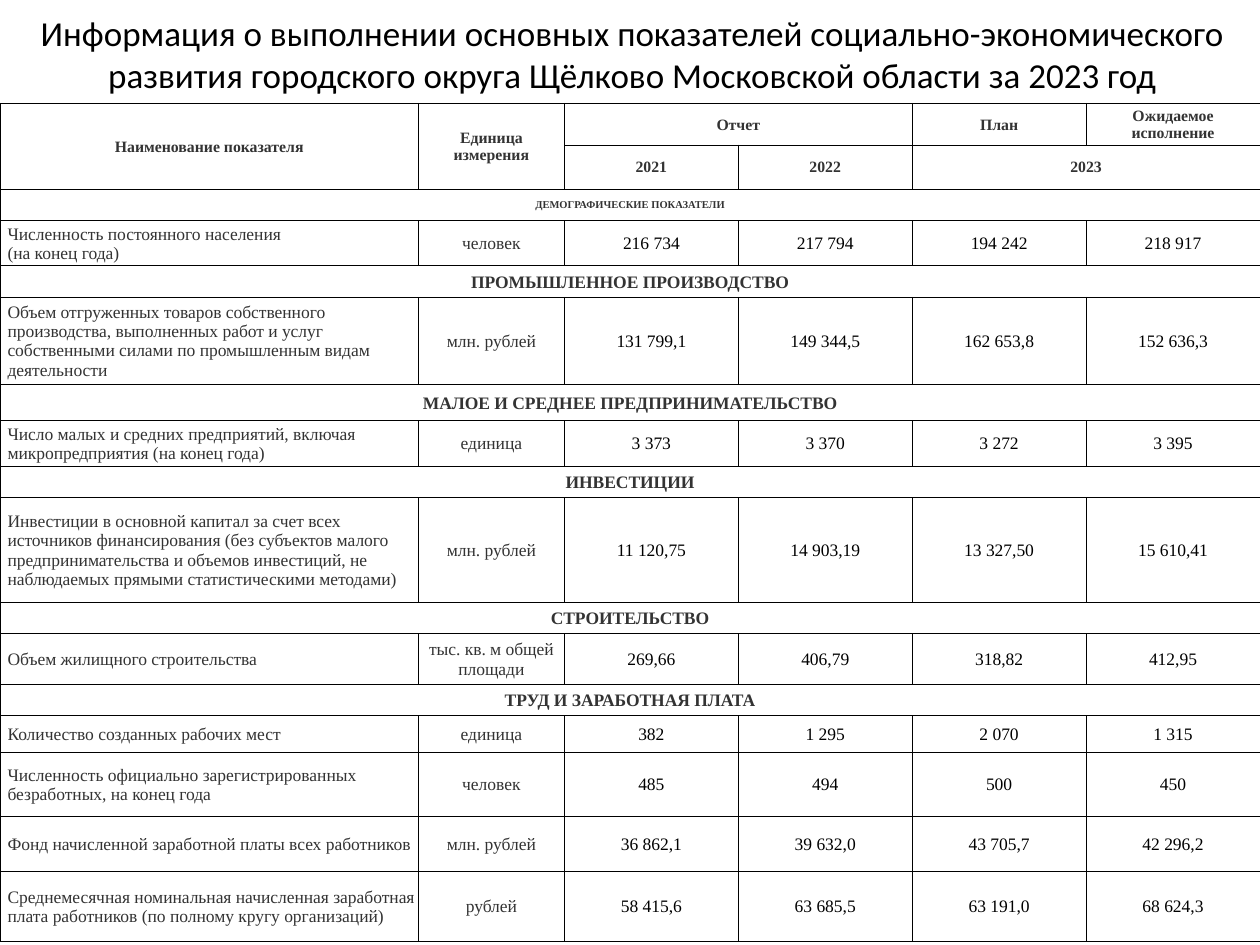
from copy import deepcopy

from lxml.etree import SubElement
from pptx import Presentation
from pptx.dml.color import RGBColor as RGB
from pptx.enum.text import MSO_ANCHOR as ANCHOR, MSO_AUTO_SIZE as AUTO, PP_ALIGN as ALIGN
from pptx.oxml.ns import qn
from pptx.util import Inches, Pt

# Content: a plain string is a section heading, a tuple is an indicator
TITLE = ("Информация о выполнении основных показателей социально-экономического "
         "развития городского округа Щёлково Московской области за 2023 год")
HEADER = [
    ("Наименование показателя", "Единица\nизмерения", "Отчет", None, "План",
     "Ожидаемое\nисполнение"),
    (None, None, "2021", "2022", "2023", None),
]
BODY = [
    "ДЕМОГРАФИЧЕСКИЕ ПОКАЗАТЕЛИ",
    ("Численность постоянного населения\v(на конец года)", "человек",
     "216 734", "217 794", "194 242", "218 917"),
    "ПРОМЫШЛЕННОЕ ПРОИЗВОДСТВО",
    ("Объем отгруженных товаров собственного производства, выполненных работ и услуг "
     "собственными силами по промышленным видам деятельности", "млн. рублей",
     "131 799,1", "149 344,5", "162 653,8", "152 636,3"),
    "МАЛОЕ И СРЕДНЕЕ ПРЕДПРИНИМАТЕЛЬСТВО",
    ("Число малых и средних предприятий, включая микропредприятия (на конец года)",
     "единица", "3 373", "3 370", "3 272", "3 395"),
    "ИНВЕСТИЦИИ",
    ("Инвестиции в основной капитал за счет всех источников финансирования (без субъектов "
     "малого предпринимательства и объемов инвестиций, не наблюдаемых прямыми "
     "статистическими методами)", "млн. рублей",
     "11 120,75", "14 903,19", "13 327,50", "15 610,41"),
    "СТРОИТЕЛЬСТВО",
    ("Объем жилищного строительства", "тыс. кв. м общей площади",
     "269,66", "406,79", "318,82", "412,95"),
    "ТРУД И ЗАРАБОТНАЯ ПЛАТА",
    ("Количество созданных рабочих мест", "единица", "382", "1 295", "2 070", "1 315"),
    ("Численность официально зарегистрированных безработных, на конец года", "человек",
     "485", "494", "500", "450"),
    ("Фонд начисленной заработной платы всех работников", "млн. рублей",
     "36 862,1", "39 632,0", "43 705,7", "42 296,2"),
    ("Среднемесячная номинальная начисленная заработная плата работников "
     "(по полному кругу организаций)", "рублей",
     "58 415,6", "63 685,5", "63 191,0", "68 624,3"),
]

# Layout in inches
COLS = [3.32, 1.16] + [1.38] * 4
SECTION_H = 0.25
ROWS = [0.33, 0.35, SECTION_H, 0.36, SECTION_H, 0.69, 0.29, 0.36, SECTION_H, 0.83,
        SECTION_H, 0.4, SECTION_H, 0.29, 0.51, 0.44, 0.55]
TABLE_TOP = 0.82
HEADER_MERGES = [((0, 0), (1, 0)), ((0, 1), (1, 1)), ((0, 2), (0, 3)), ((1, 4), (1, 5))]

COLORS = {"text": "333333", "value": "000000", "line": "000000", "fill": "FFFFFF"}
FONT = "Times New Roman"


def style_run(r, size, color, bold=False, name=FONT):
    for key, value in dict(name=name, size=Pt(size), bold=bold).items():
        setattr(r.font, key, value)
    r.font.color.rgb = RGB.from_string(COLORS[color])


def add_borders(cell):
    tc_pr = cell._tc.get_or_add_tcPr()
    for i, side in enumerate(("lnL", "lnR", "lnT", "lnB")):
        ln = tc_pr.makeelement(qn(f"a:{side}"), {"w": str(Pt(0.5))})
        fill = SubElement(ln, qn("a:solidFill"))
        SubElement(fill, qn("a:srgbClr"), val=COLORS["line"])
        tc_pr.insert(i, ln)


def frame_cell(cell):
    margins = dict(margin_left=0.01, margin_right=0.01, margin_top=0.01, margin_bottom=0)
    for key, value in margins.items():
        setattr(cell, key, Inches(value))
    cell.vertical_anchor = ANCHOR.MIDDLE
    cell.fill.solid()
    cell.fill.fore_color.rgb = RGB.from_string(COLORS["fill"])
    add_borders(cell)


def write_cell(cell, text, align=ALIGN.CENTER, **font):
    cell.text = text
    for p in cell.text_frame.paragraphs:
        p.alignment = align
        for r in p.runs:
            style_run(r, **font)
        for br in p._p.findall(qn("a:br")):
            br.insert(0, deepcopy(p.runs[0]._r.rPr))


prs = Presentation()
prs.slide_width, prs.slide_height = Inches(10), Inches(7.5)
slide = prs.slides.add_slide(prs.slide_layouts[5])

# Title
title = slide.shapes.title
title.left, title.top, title.width, title.height = map(Inches, (0.04, 0.04, 9.96, 0.77))
tf = title.text_frame
tf.text = TITLE
tf.word_wrap = True
tf.auto_size = AUTO.SHAPE_TO_FIT_TEXT
tf.vertical_anchor = ANCHOR.TOP
tf.paragraphs[0].alignment = ALIGN.CENTER
style_run(tf.paragraphs[0].runs[0], 20, "value", name="Calibri")

# Table grid
table = slide.shapes.add_table(len(ROWS), len(COLS), 0, Inches(TABLE_TOP),
                               Inches(sum(COLS)), Inches(sum(ROWS))).table
table.first_row = table.horz_banding = False
for col, width in zip(table.columns, COLS):
    col.width = Inches(width)
for row, height in zip(table.rows, ROWS):
    row.height = Inches(height)
for cell in table.iter_cells():
    frame_cell(cell)

# Header
for first, last in HEADER_MERGES:
    table.cell(*first).merge(table.cell(*last))
for i, row in enumerate(HEADER):
    for j, text in enumerate(row):
        if text:
            write_cell(table.cell(i, j), text, size=9, color="text", bold=True)

# Sections and indicators
for i, row in enumerate(BODY, len(HEADER)):
    if isinstance(row, str):
        table.cell(i, 0).merge(table.cell(i, len(COLS) - 1))
        size = 6 if i == len(HEADER) else 10
        write_cell(table.cell(i, 0), row, size=size, color="text", bold=True)
        continue
    for j, text in enumerate(row):
        write_cell(table.cell(i, j), text, ALIGN.CENTER if j else ALIGN.LEFT,
                   size=10, color="value" if j > 1 else "text")
    table.cell(i, 0).margin_left = Inches(0.06)

# Small empty text keeps merged cells from stretching their rows
for cell in table.iter_cells():
    if cell.is_spanned:
        SubElement(cell.text_frame.paragraphs[0]._p, qn("a:endParaRPr"), sz="600")

prs.save("out.pptx")
